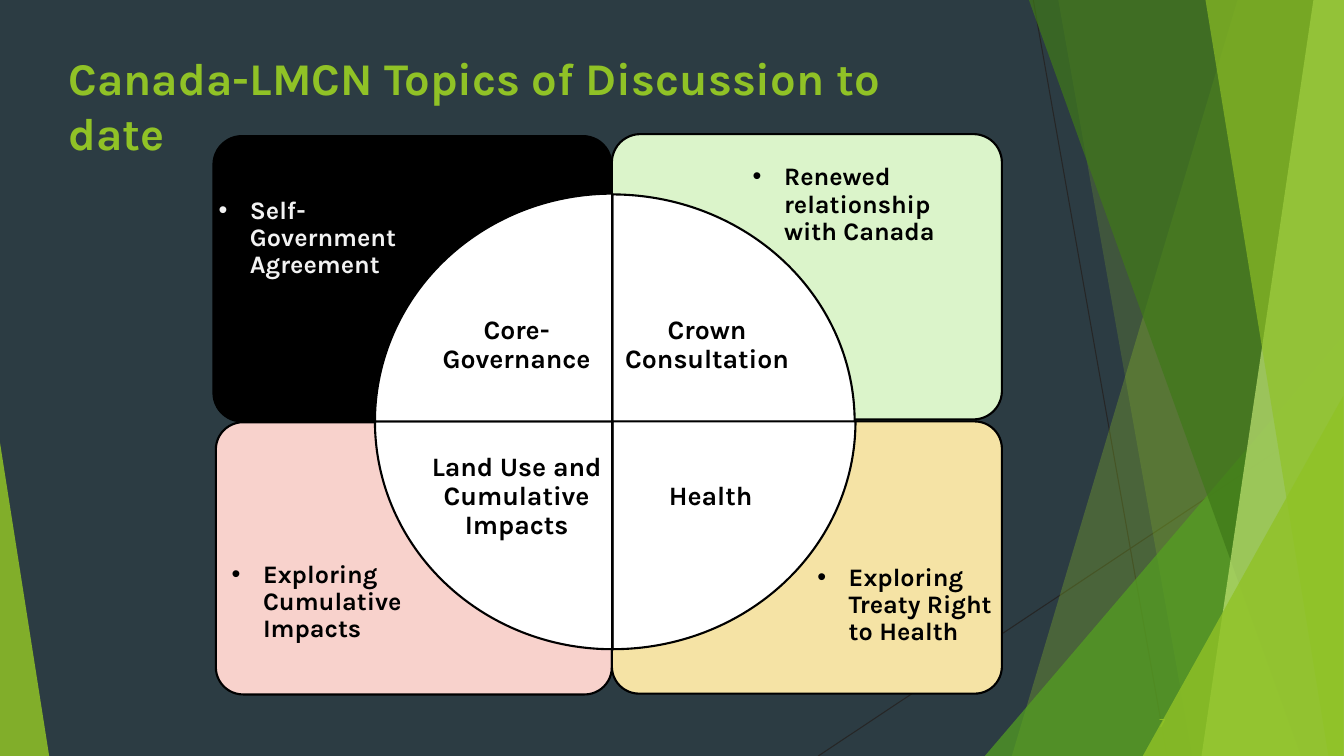
"""Build the discussion topics slide: a four-part wheel over four panels."""
from dataclasses import dataclass
from typing import Any, Union

from lxml import etree
from pptx import Presentation
from pptx import util as u
from pptx.dml import color
from pptx.enum import shapes, text
from pptx.oxml import ns

W, H = 33.87, 19.05
FONT = "Karla"
GREEN, BLACK = "90C226", "000000"


@dataclass
class Box:
    x: float
    y: float
    w: float
    h: float

    def lengths(self) -> list:
        return [u.Cm(v) for v in (self.x, self.y, self.w, self.h)]


@dataclass
class Strip:
    top: float
    bottom: float
    fill: str
    alpha: int


@dataclass
class Triangle:
    box: Box
    apex: float
    fill: str
    alpha: int


@dataclass
class Topic:
    label: str
    label_box: Box
    pie: Box
    start: int
    end: int


@dataclass
class Panel:
    box: Box
    fill: str
    point: str
    point_box: Box
    ink: str = BLACK


RAYS = [(26.04, 0, 29.41, H), (W, 10.24, 20.62, H)]
FACETS = [
    Strip(31.19, 25.5, GREEN, 30),
    Strip(26.67, 30.05, GREEN, 20),
    Triangle(Box(24.82, 8.46, 9.04, 10.59), 1, "54A021", 72),
    Strip(25.93, 32.79, "3F7819", 70),
    Strip(33.1, 30.28, "C0E474", 70),
    Strip(30.38, 33.48, GREEN, 65),
    Triangle(Box(28.8, 9.98, 5.05, 9.07), 1, GREEN, 80),
    Triangle(Box(0, 11.15, 1.24, 7.9), 0, GREEN, 85),
]
PANELS = [
    Panel(Box(5.44, 10.64, 9.98, 6.86), "F8D2CC", "Exploring Cumulative Impacts",
          Box(5.59, 14.02, 5.11, 2.34)),
    Panel(Box(5.38, 3.43, 10.03, 7.19), BLACK, "Self-Government Agreement",
          Box(5.26, 4.85, 6.02, 2.34), "F2F2F2"),
    Panel(Box(15.42, 10.62, 9.83, 6.86), "F5E3A5", "Exploring Treaty Right to Health",
          Box(20.35, 14.1, 5.51, 2.34)),
    Panel(Box(15.42, 3.38, 9.83, 7.19), "DBF4CA", "Renewed relationship with Canada",
          Box(18.72, 4.01, 6.2, 2.34)),
]
TOPICS = [
    Topic("Crown Consultation", Box(15.57, 7.01, 4.5, 3.4),
          Box(9.32, 4.9, 12.22, 11.46), 162, 0),
    Topic("Health", Box(15.65, 10.82, 4.52, 3.4),
          Box(9.32, 4.88, 12.24, 11.48), 0, 54),
    Topic("Land Use and Cumulative Impacts", Box(10.8, 10.82, 4.44, 3.4),
          Box(9.45, 4.88, 11.96, 11.48), 54, 108),
    Topic("Core-Governance", Box(10.8, 7.01, 4.44, 3.4),
          Box(9.45, 4.88, 11.96, 11.48), 108, 162),
]


def rgb(value: str) -> color.RGBColor:
    return color.RGBColor.from_string(value)


def paint(sp: Any, fill: str, outlined: bool = False, alpha: int = 100) -> None:
    sp.shadow.inherit = False
    sp.fill.solid()
    sp.fill.fore_color.rgb = rgb(fill)
    if alpha < 100:
        clr = sp.fill._xPr.find(".//" + ns.qn("a:srgbClr"))
        etree.SubElement(clr, ns.qn("a:alpha"), val=str(alpha * 1000))
    if outlined:
        sp.line.color.rgb = rgb(BLACK)
        sp.line.width = u.Pt(1.5)
    else:
        sp.line.fill.background()


def write(sp: Any, words: str, size: float, ink: str, bold: bool = True,
          align: Any = text.PP_ALIGN.LEFT, anchor: Any = text.MSO_ANCHOR.TOP) -> Any:
    tf = sp.text_frame
    tf.text = words
    tf.word_wrap = True
    tf.auto_size = text.MSO_AUTO_SIZE.NONE
    tf.vertical_anchor = anchor
    p = tf.paragraphs[0]
    p.alignment = align
    r = p.runs[0]
    r.font.name, r.font.size, r.font.bold = FONT, u.Pt(size), bold
    r.font.color.rgb = rgb(ink)
    return p


def draw_ray(s: Any, ray: tuple) -> None:
    sp = s.shapes.add_connector(shapes.MSO_CONNECTOR.STRAIGHT, *[u.Cm(v) for v in ray])
    sp.line.color.rgb = rgb("262626")
    sp.line.width = u.Pt(0.75)
    etree.SubElement(sp._element.spPr, ns.qn("a:effectLst"))


def draw_facet(s: Any, facet: Union[Strip, Triangle]) -> None:
    if isinstance(facet, Strip):
        builder = s.shapes.build_freeform(u.Cm(facet.top), 0)
        corners = [(W, 0), (W, H), (facet.bottom, H)]
        builder.add_line_segments([(u.Cm(x), u.Cm(y)) for x, y in corners])
        sp = builder.convert_to_shape()
    else:
        sp = s.shapes.add_shape(shapes.MSO_SHAPE.ISOSCELES_TRIANGLE, *facet.box.lengths())
        sp.adjustments[0] = facet.apex
    paint(sp, facet.fill, alpha=facet.alpha)


def draw_panel(s: Any, panel: Panel) -> None:
    sp = s.shapes.add_shape(shapes.MSO_SHAPE.ROUNDED_RECTANGLE, *panel.box.lengths())
    sp.adjustments[0] = 0.1
    paint(sp, panel.fill, outlined=True)


def draw_topic(s: Any, topic: Topic) -> None:
    sp = s.shapes.add_shape(shapes.MSO_SHAPE.PIE, *topic.pie.lengths())
    sp.adjustments[0], sp.adjustments[1] = topic.start, topic.end
    paint(sp, "FFFFFF", outlined=True)
    label = s.shapes.add_textbox(*topic.label_box.lengths())
    p = write(label, topic.label, 19, BLACK, align=text.PP_ALIGN.CENTER,
              anchor=text.MSO_ANCHOR.MIDDLE)
    tf = label.text_frame
    tf.margin_left = tf.margin_right = tf.margin_top = tf.margin_bottom = u.Cm(0.07)
    p.line_spacing, p.space_after = 0.9, u.Pt(6.65)


def draw_point(s: Any, panel: Panel) -> None:
    p = write(s.shapes.add_textbox(*panel.point_box.lengths()), panel.point, 18, panel.ink)
    p.line_spacing, p.space_after = 0.9, u.Pt(6.66)
    pPr = p._p.get_or_add_pPr()
    pPr.set("marL", str(u.Cm(0.79)))
    pPr.set("indent", str(u.Cm(-0.79)))
    etree.SubElement(pPr, ns.qn("a:buFont"), typeface="Arial")
    etree.SubElement(pPr, ns.qn("a:buChar"), char="•")


def main() -> None:
    prs = Presentation()
    prs.slide_width, prs.slide_height = u.Cm(W), u.Cm(H)
    s = prs.slides.add_slide(prs.slide_layouts[5])
    s.background.fill.solid()
    s.background.fill.fore_color.rgb = rgb("2C3C43")
    for ray in RAYS:
        draw_ray(s, ray)
    for facet in FACETS:
        draw_facet(s, facet)
    for panel in PANELS:
        draw_panel(s, panel)
    title = s.shapes.title
    title.left, title.top, title.width, title.height = Box(1.47, 1.14, 23.11, 0.84).lengths()
    write(title, "Canada-LMCN Topics of Discussion to date", 32.4, GREEN)
    for topic in TOPICS:
        draw_topic(s, topic)
    number = s.shapes.add_textbox(*Box(27.51, 17.78, 2.11, 0.84).lengths())
    write(number, "7", 9, GREEN, False, text.PP_ALIGN.RIGHT, text.MSO_ANCHOR.MIDDLE)
    for panel in PANELS:
        draw_point(s, panel)
    prs.save("out.pptx")


if __name__ == "__main__":
    main()
